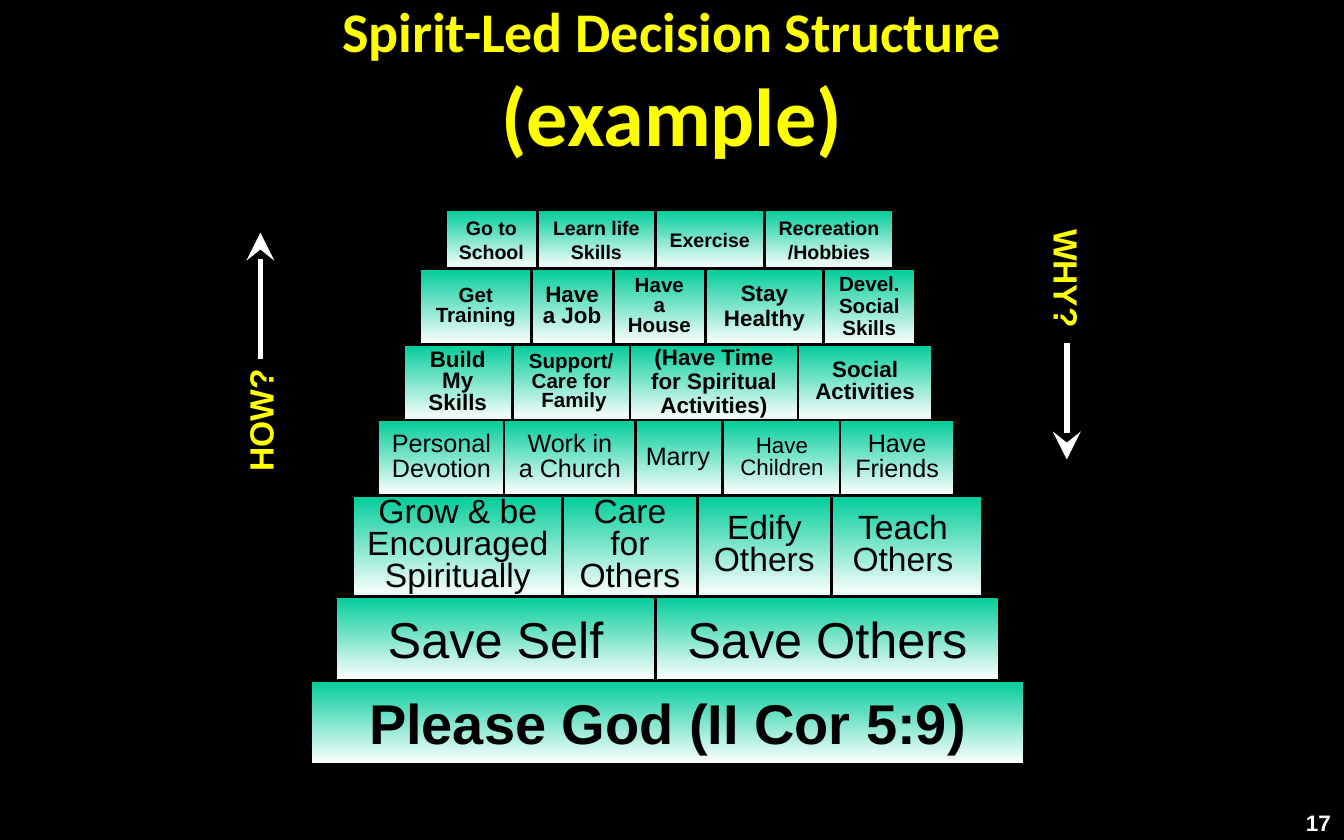
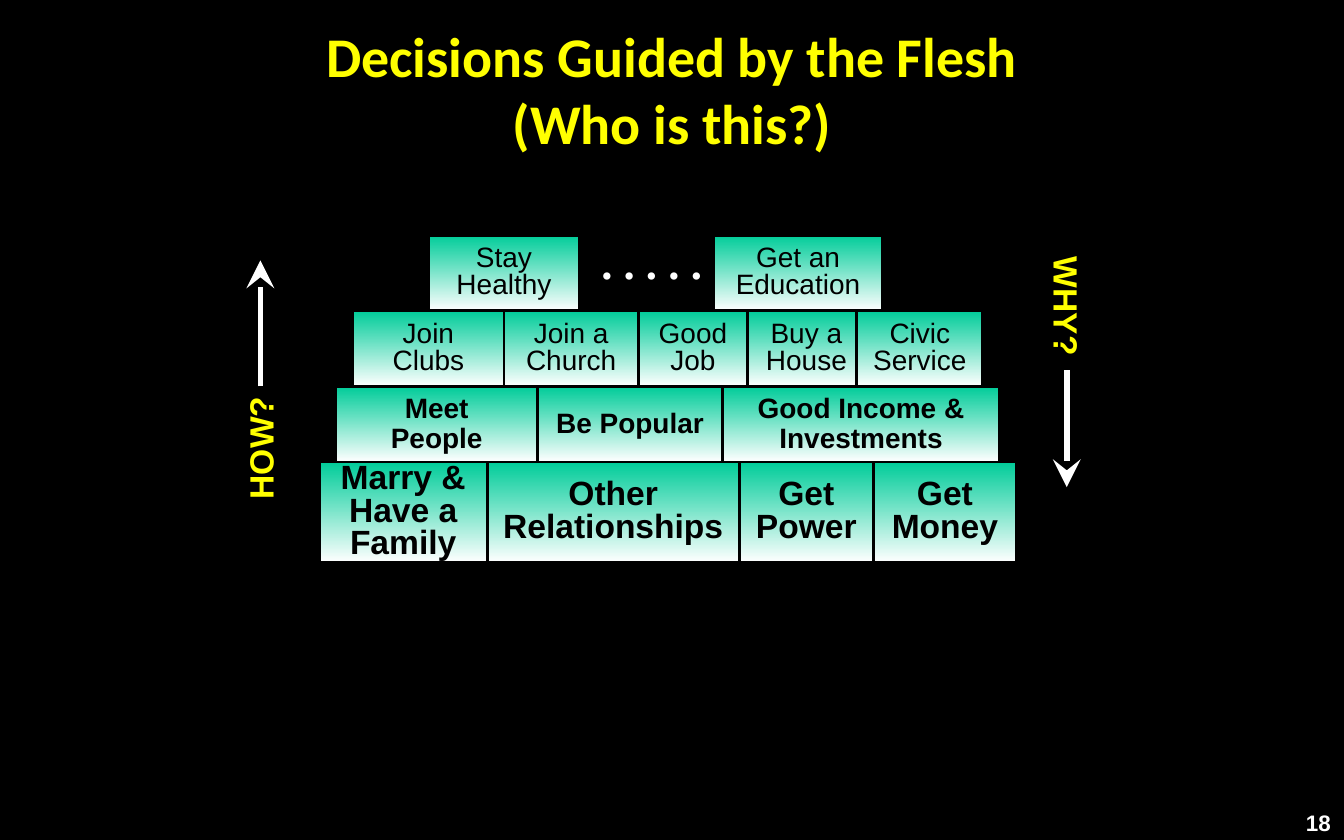
"""Build two slides of stacked decision blocks on a 160 x 100 grid."""
import pptx
import pptx.dml.color
import pptx.enum.shapes
import pptx.enum.text
import pptx.oxml
import pptx.oxml.ns
import pptx.util

RGB = pptx.dml.color.RGBColor
BLACK = RGB(0x00, 0x00, 0x00)
WHITE = RGB(0xFF, 0xFF, 0xFF)
YELLOW = RGB(0xFF, 0xFF, 0x00)
GREEN = RGB(0x00, 0xCC, 0x99)
ALIGN = pptx.enum.text.PP_ALIGN
ANCHOR = pptx.enum.text.MSO_ANCHOR
RECT = pptx.enum.shapes.MSO_SHAPE.RECTANGLE
STRAIGHT = pptx.enum.shapes.MSO_CONNECTOR.STRAIGHT

prs = pptx.Presentation()
prs.slide_width = pptx.util.Inches(10)
prs.slide_height = pptx.util.Inches(6.25)
UNIT = prs.slide_width / 160

TITLE = dict(name="Calibri", size=30, bold=True, color=YELLOW)
LABEL = dict(name="Arial", size=18, bold=True, color=YELLOW)
NUMBER = dict(name="Arial", size=12, bold=True, color=WHITE)
DOTS = dict(name="Times New Roman", size=24, bold=True, color=WHITE)
BLOCK = dict(name="Arial", bold=False, color=BLACK)


def grid(*values):
    """Turn grid units into slide lengths."""
    return [round(v * UNIT) for v in values]


def write(sp, text, fmt, align=ALIGN.CENTER, anchor=ANCHOR.MIDDLE, spacing=None):
    """Fill a shape with formatted paragraphs and return its text frame."""
    tf = sp.text_frame
    tf.word_wrap = True
    tf.vertical_anchor = anchor
    for i, line in enumerate(text.split("\n")):
        p = tf.add_paragraph() if i else tf.paragraphs[0]
        p.text = line
        p.alignment = align
        p.line_spacing = spacing
        for r in p.runs:
            for key, value in fmt.items():
                if key == "color":
                    r.font.color.rgb = value
                else:
                    setattr(r.font, key, pptx.util.Pt(value) if key == "size" else value)
    return tf


# Rows: top, height, bold, blocks of (left, width, size, line spacing, text)
SLIDES = [
    dict(number="17", title="Spirit-Led Decision Structure ", accent="(example)",
         title_box=(20, 5, 120, 9), shift=0, dots=None, rows=[
        (25, 7, True, [
            (53, 11, 10.5, None, "Go to School"),
            (64, 14, 10.5, None, "Learn life Skills"),
            (78, 13, 10.5, None, "Exercise"),
            (91, 15.4, 10.5, None, "Recreation /Hobbies")]),
        (32, 9, True, [
            (63, 10.2, 12, 0.8, "Have a Job"),
            (50, 13.3, 11, 0.8, "Get\nTraining"),
            (73, 11, 11, 0.8, "Have a House"),
            (84, 14, 12, 0.9, "Stay Healthy"),
            (98, 11, 11, 0.9, "Devel. Social Skills")]),
        (41, 9, True, [
            (48, 13, 12, 0.8, "Build My Skills"),
            (61, 14, 11, 0.8, "Support/ Care for\n Family"),
            (75, 20, 12, 0.9, "(Have Time for Spiritual Activities)"),
            (95, 16, 12, 0.8, "Social\nActivities")]),
        (50, 9, False, [
            (75, 11.4, 13.5, 0.8, "Marry"),
            (45, 15.1, 13.5, 0.8, "Personal\nDevotion"),
            (60, 15.7, 13.5, 0.8, "Work in a Church"),
            (86, 14.2, 12, 0.8, "Have Children"),
            (100, 13.6, 13.5, 0.8, "Have Friends")]),
        (59, 12, False, [
            (42, 25, 18, 0.8, "Grow & be Encouraged\nSpiritually"),
            (67, 16, 18, 0.8, "Care for Others"),
            (98, 19, 18, 0.8, "Teach Others"),
            (83, 16, 18, 0.8, "Edify Others")]),
        (71, 10, False, [
            (40, 38, 27, None, "Save Self"),
            (78, 41, 27, None, "Save Others")]),
        (81, 10, True, [(37, 85, 30, None, "Please God (II Cor 5:9)")])]),
    dict(number="18", title="Decisions Guided by the Flesh\v(Who is this?)", accent=None,
         title_box=(20, 2, 120, 17), shift=3.3, dots=(70, 27.2, 15.4, 8), rows=[
        (28, 9, False, [
            (51, 18, 15, 0.8, "Stay\nHealthy"),
            (85, 20, 15, 0.8, "Get an Education")]),
        (37, 9, False, [
            (42, 18, 15, 0.8, "Join Clubs"),
            (60, 16, 15, 0.8, "Join a Church"),
            (76, 13, 15, 0.8, "Good Job"),
            (89, 14, 15, 0.8, "Buy a House"),
            (102, 15, 15, 0.8, "Civic Service")]),
        (46, 9, True, [
            (40, 24, 15, 0.9, "Meet\nPeople"),
            (64, 22, 15, 0.9, "Be Popular"),
            (86, 33, 15, 0.9, "Good Income & Investments")]),
        (55, 12, True, [
            (38, 20, 18, 0.8, "Marry & Have a Family"),
            (58, 30, 18, 0.8, "Other Relationships"),
            (88, 16, 18, 0.8, "Get Power"),
            (104, 17, 18, 0.8, "Get\nMoney")])]),
]

# Guides: label, rotation, label box, arrow column, arrow start and end
GUIDES = [
    ("WHY?", 90, (119, 30.5, 16, 6.4), 127, 40.8, 54.7),
    ("HOW?", 270, (22.5, 46, 17, 6.4), 31, 42.7, 27.7),
]

for page in SLIDES:
    s = prs.slides.add_slide(prs.slide_layouts[6])
    s.background.fill.solid()
    s.background.fill.fore_color.rgb = BLACK

    sp = s.shapes.add_textbox(*grid(152, 95.5, 8, 4.5))
    write(sp, page["number"], NUMBER, ALIGN.RIGHT, ANCHOR.TOP)

    sp = s.shapes.add_textbox(*grid(*page["title_box"]))
    tf = write(sp, page["title"], TITLE)
    if page["accent"]:
        r = tf.paragraphs[0].add_run()
        r.text = page["accent"]
        r.font.name = TITLE["name"]
        r.font.size = pptx.util.Pt(44)
        r.font.bold = True
        r.font.color.rgb = YELLOW

    for top, height, bold, blocks in page["rows"]:
        for left, width, size, spacing, text in blocks:
            sp = s.shapes.add_shape(RECT, *grid(left, top, width, height))
            sp.shadow.inherit = False
            sp.fill.gradient()
            sp.fill.gradient_angle = 270
            for stop, color in zip(sp.fill.gradient_stops, (GREEN, WHITE)):
                stop.color.rgb = color
            sp.line.color.rgb = BLACK
            sp.line.width = pptx.util.Pt(1.5)
            write(sp, text, dict(BLOCK, size=size, bold=bold), spacing=spacing)

    if page["dots"]:
        sp = s.shapes.add_textbox(*grid(*page["dots"]))
        tf = write(sp, ". . . . .", DOTS, ALIGN.LEFT, ANCHOR.TOP)
        tf.word_wrap = False

    for text, rotation, (left, top, width, height), x, start, end in GUIDES:
        shift = page["shift"]
        sp = s.shapes.add_textbox(*grid(left, top + shift, width, height))
        sp.rotation = rotation
        write(sp, text, LABEL, ALIGN.LEFT, ANCHOR.TOP)
        sp = s.shapes.add_connector(STRAIGHT, *grid(x, start + shift, x, end + shift))
        sp.line.color.rgb = WHITE
        sp.line.width = pptx.util.Pt(3)
        ns = pptx.oxml.ns.nsdecls("a")
        sp.line._get_or_add_ln().append(pptx.oxml.parse_xml(
            f'<a:tailEnd {ns} type="stealth" w="lg" len="lg"/>'))
        sp._element.spPr.append(pptx.oxml.parse_xml(f"<a:effectLst {ns}/>"))

prs.save("out.pptx")
